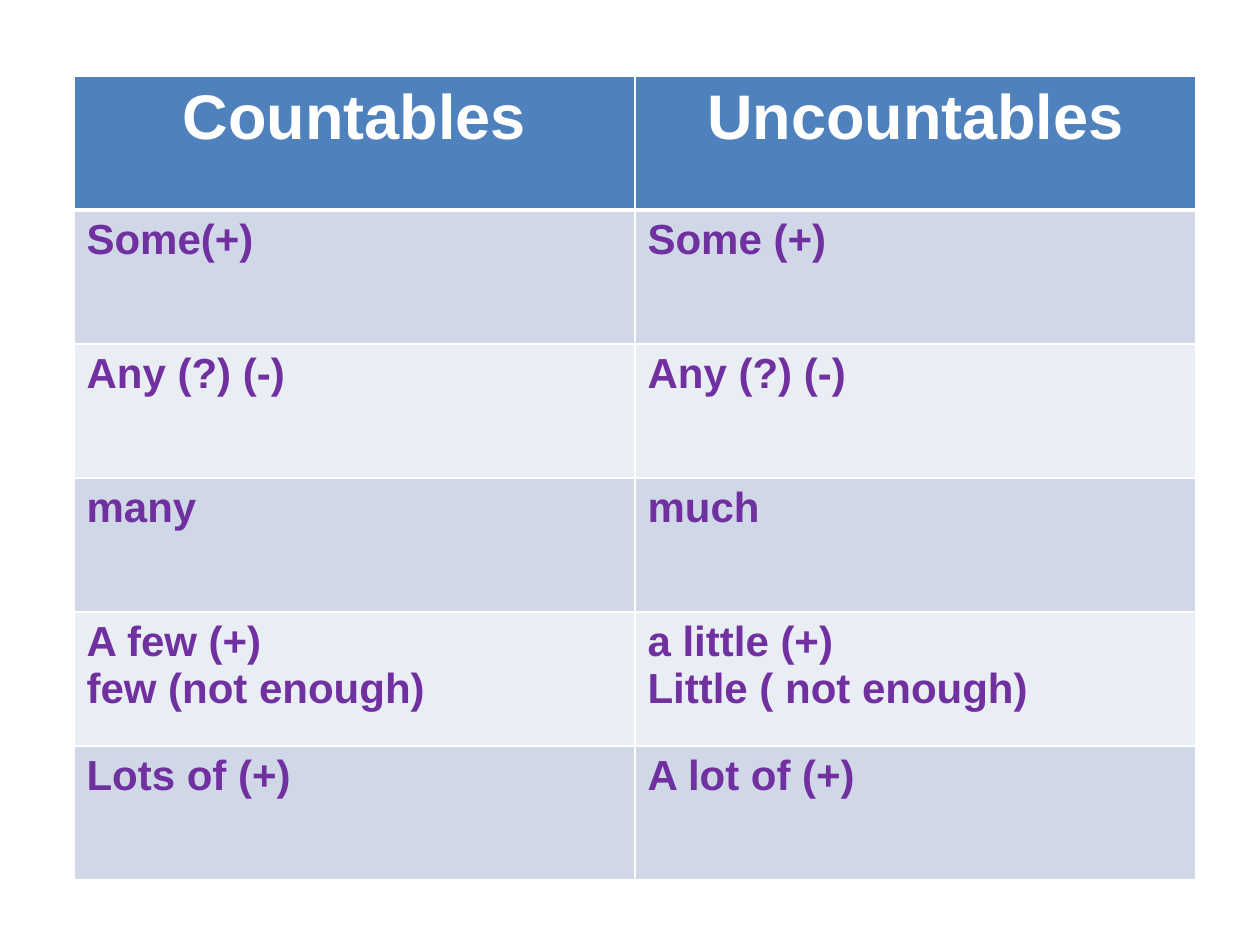
from pptx import Presentation
from pptx.dml.color import RGBColor as Rgb
from pptx.enum.text import PP_ALIGN as Align
from pptx.oxml.ns import qn
from pptx.util import Pt
from lxml.etree import SubElement as Sub

SCALE = 914400 / 126
COLORS = {"head": "4F81BD", "odd": "D0D8E8", "even": "E9EDF4",
          "line": "FFFFFF", "title": "FFFFFF", "word": "7030A0"}
ROWS = [
    ("Countables", "Uncountables"),
    ("Some(+)", "Some (+)"),
    ("Any (?) (-)", "Any (?) (-)"),
    ("many", "much"),
    ("A few (+)\nfew (not enough)", "a little (+)\nLittle ( not enough)"),
    ("Lots of (+)", "A lot of (+)"),
]
TITLE = {"name": "Arial", "size": Pt(36), "bold": True}
WORD = {"name": "Arial", "size": Pt(24), "bold": True}


def px(n):
    return round(n * SCALE)


def edge(cell, row):
    """Draw the cell borders, thicker below the header."""
    wide = {"T": 3 if row == 1 else 1, "B": 3 if row == 0 else 1}
    props = cell._tc.get_or_add_tcPr()
    for side in "LRTB":
        line = Sub(props, qn(f"a:ln{side}"), w=str(Pt(wide.get(side, 1))))
        fill = Sub(line, qn("a:solidFill"))
        Sub(fill, qn("a:srgbClr"), val=COLORS["line"])


def paint(cell, row):
    key = "head" if row == 0 else "odd" if row % 2 else "even"
    cell.fill.solid()
    cell.fill.fore_color.rgb = Rgb.from_string(COLORS[key])


def write(cell, text, head):
    cell.text = text
    for para in cell.text_frame.paragraphs:
        para.alignment = Align.CENTER if head else Align.LEFT
        font = para.runs[0].font
        for key, val in (TITLE if head else WORD).items():
            setattr(font, key, val)
        font.color.rgb = Rgb.from_string(COLORS["title" if head else "word"])


def grid(slide, left, top, wide, high):
    """Add the word table; wide and high are those of one cell."""
    rows, cols = len(ROWS), len(ROWS[0])
    table = slide.shapes.add_table(rows, cols, px(left), px(top),
                                   px(wide * cols), px(high * rows)).table
    for r, texts in enumerate(ROWS):
        for c, text in enumerate(texts):
            cell = table.cell(r, c)
            edge(cell, r)
            paint(cell, r)
            write(cell, text, r == 0)


def main():
    deck = Presentation()
    deck.slide_width, deck.slide_height = px(1260), px(945)
    slide = deck.slides.add_slide(deck.slide_layouts[6])
    grid(slide, 74, 76, 561, 134)
    deck.save("out.pptx")


if __name__ == "__main__":
    main()
